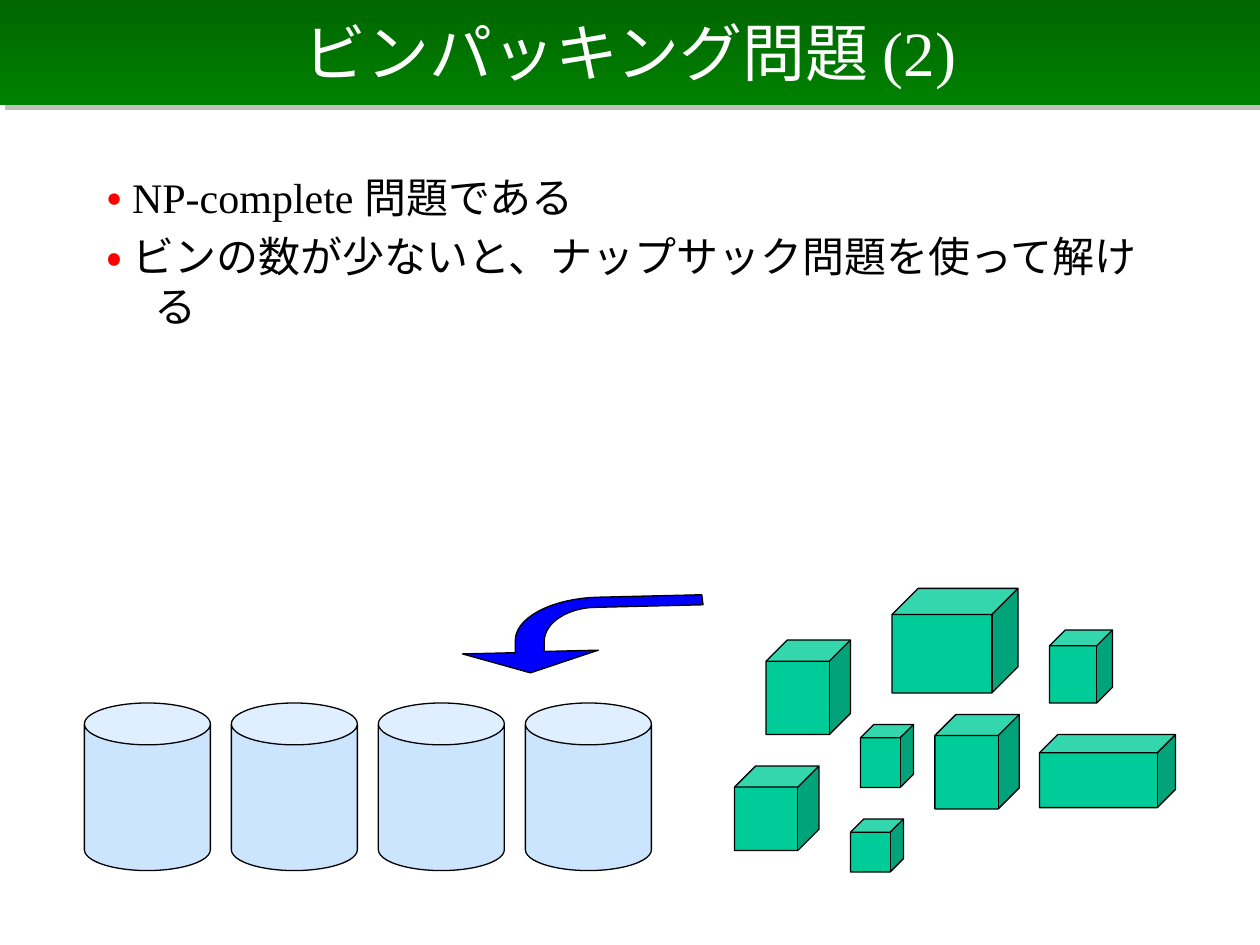
from lxml import etree
from pptx import Presentation
from pptx.dml.color import RGBColor
from pptx.enum.lang import MSO_LANGUAGE_ID
from pptx.enum.shapes import MSO_SHAPE
from pptx.enum.text import MSO_ANCHOR, MSO_AUTO_SIZE, PP_ALIGN
from pptx.oxml.ns import qn
from pptx.util import Inches, Pt

CAN, CUBE = MSO_SHAPE.CAN, MSO_SHAPE.CUBE
MIDDLE, CENTER = MSO_ANCHOR.MIDDLE, PP_ALIGN.CENTER
NO_FIT = MSO_AUTO_SIZE.NONE
JAPANESE = MSO_LANGUAGE_ID.JAPANESE

COLORS = {
    "banner_top": "006600",
    "banner_bottom": "008000",
    "shadow": "808080",
    "title": "FFFFFF",
    "text": "000000",
    "bullet": "FF0000",
    "bin": "99CCFF",
    "item": "00CC99",
    "arrow": "0000FF",
    "outline": "000000",
}
BIN_LEFTS = [0.67 + 3.5 / 3 * i for i in range(4)]
ITEMS = [
    (6.08, 5.08, 0.67, 0.75),
    (7.42, 5.67, 0.67, 0.75),
    (6.83, 5.75, 0.42, 0.5),
    (8.33, 5, 0.5, 0.58),
    (7.08, 4.67, 1, 0.83),
    (8.25, 5.83, 1.08, 0.58),
    (5.83, 6.08, 0.67, 0.67),
    (6.75, 6.5, 0.42, 0.42),
]


def rgb(name):
    return RGBColor.from_string(COLORS[name])


def curve(start, control_1, control_2, end, steps=16):
    points = []
    for step in range(steps + 1):
        t = step / steps
        weights = ((1 - t) ** 3, 3 * t * (1 - t) ** 2, 3 * t**2 * (1 - t), t**3)
        corners = (start, control_1, control_2, end)
        points.append(tuple(
            sum(w * corner[axis] for w, corner in zip(weights, corners))
            for axis in (0, 1)
        ))
    return points


class SlideBuilder:
    font = "Times New Roman"
    outline_width = Pt(0.75)

    def __init__(self, page):
        self.page = page

    def style_span(self, span, size, color, bold=False):
        span.font.name = self.font
        span.font.size = Pt(size)
        span.font.bold = bold
        span.font.color.rgb = rgb(color)
        span.font.language_id = JAPANESE

    def paint(self, shape, color, opacity=100):
        shape.shadow.inherit = False
        shape.fill.solid()
        shape.fill.fore_color.rgb = rgb(color)
        if opacity < 100:
            color_node = shape.fill._xPr.find(qn("a:solidFill"))[0]
            etree.SubElement(color_node, qn("a:alpha"), val=str(opacity * 1000))
        shape.line.color.rgb = rgb("outline")
        shape.line.width = self.outline_width

    def title(self, text, left, top, width, height):
        banner = self.page.shapes.title
        banner.left, banner.top = Inches(left), Inches(top)
        banner.width, banner.height = Inches(width), Inches(height)
        banner.fill.gradient()
        banner.fill.gradient_angle = 270
        stops = banner.fill.gradient_stops
        for stop, position, color in zip(stops, (0, 1), ("banner_top", "banner_bottom")):
            stop.position = position
            stop.color.rgb = rgb(color)
        banner.line.fill.background()
        effects = etree.SubElement(banner._element.spPr, qn("a:effectLst"))
        shadow = etree.SubElement(
            effects, qn("a:outerShdw"), dist=str(Pt(4.2)), dir="2700000",
            algn="ctr", rotWithShape="0",
        )
        shade = etree.SubElement(shadow, qn("a:srgbClr"), val=COLORS["shadow"])
        etree.SubElement(shade, qn("a:alpha"), val="50000")
        frame = banner.text_frame
        frame.text = text
        frame.auto_size = NO_FIT
        frame.vertical_anchor = MIDDLE
        para = frame.paragraphs[0]
        para.alignment = CENTER
        self.style_span(para.runs[0], 36, "title")

    def bullets(self, lines, left, top, width, height):
        box = self.page.shapes.add_textbox(
            Inches(left), Inches(top), Inches(width), Inches(height)
        )
        frame = box.text_frame
        frame.word_wrap = True
        for index, line in enumerate(lines):
            para = frame.add_paragraph() if index else frame.paragraphs[0]
            para.space_before = Pt(5)
            properties = para._p.get_or_add_pPr()
            properties.set("marL", str(Inches(0.38)))
            properties.set("indent", str(Inches(-0.38)))
            for text, color, bold in (("• ", "bullet", True), (line, "text", False)):
                span = para.add_run()
                span.text = text
                self.style_span(span, 24, color, bold)

    def solid(self, kind, bounds, color, adjustment, opacity=100):
        shape = self.page.shapes.add_shape(kind, *(Inches(v) for v in bounds))
        shape.adjustments[0] = adjustment
        self.paint(shape, color, opacity)

    def outline(self, points, color):
        corners = [(Inches(x), Inches(y)) for x, y in points]
        builder = self.page.shapes.build_freeform(*corners[0])
        builder.add_line_segments(corners[1:], close=True)
        self.paint(builder.convert_to_shape(), color)


def main():
    deck = Presentation()
    deck.slide_width, deck.slide_height = Inches(10), Inches(7.5)
    builder = SlideBuilder(deck.slides.add_slide(deck.slide_layouts[5]))

    builder.title("ビンパッキング問題 (2)", 0, -0.01, 10, 0.84)
    builder.bullets(
        [
            "NP-complete 問題である",
            "ビンの数が少ないと、ナップサック問題を使って解ける",
        ],
        0.75, 1.31, 8.5, 3,
    )
    for left in BIN_LEFTS:
        builder.solid(CAN, (left, 5.58, 1, 1.33), "bin", 0.332, opacity=50)
    for bounds in ITEMS:
        builder.solid(CUBE, bounds, "item", 0.25)

    outer_bend = curve((4.09, 5.09), (4.08, 4.91), (4.37, 4.75), (4.74, 4.74))
    inner_bend = curve((4.74, 4.82), (4.51, 4.82), (4.32, 4.94), (4.32, 5.09))
    builder.outline(
        [(4.21, 5.34), (3.67, 5.19), (4.09, 5.18)]
        + outer_bend
        + [(5.57, 4.72), (5.58, 4.8)]
        + inner_bend
        + [(4.32, 5.17), (4.75, 5.16)],
        "arrow",
    )
    deck.save("out.pptx")


if __name__ == "__main__":
    main()
